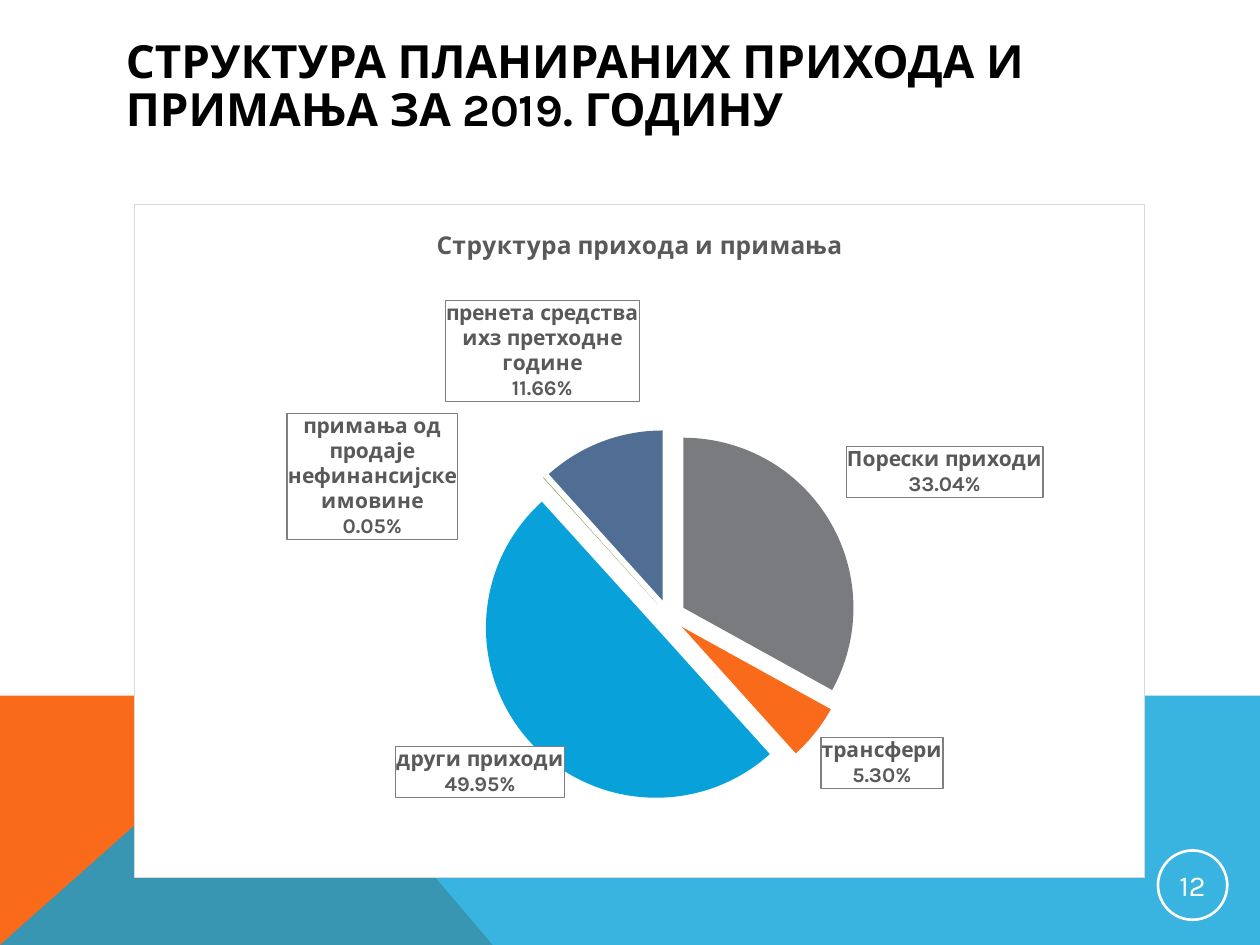
from lxml import etree
from pptx import Presentation
from pptx.chart.data import CategoryChartData
from pptx.dml.color import RGBColor
from pptx.enum.chart import XL_CHART_TYPE as ChartType
from pptx.enum.shapes import MSO_SHAPE as Shape
from pptx.enum.text import MSO_ANCHOR as Anchor, PP_ALIGN as Align
from pptx.oxml import parse_xml
from pptx.oxml.ns import nsdecls, qn
from pptx.util import Inches, Pt

FONT = "Karla"
BLACK = RGBColor(0x00, 0x00, 0x00)
WHITE = RGBColor(0xFF, 0xFF, 0xFF)
ORANGE = RGBColor(0xF9, 0x6A, 0x1B)
BLUE = RGBColor(0x08, 0xA1, 0xD9)
GRAY = RGBColor(0x79, 0x7B, 0x7E)
GREEN = RGBColor(0x7C, 0x98, 0x4A)
TAN = RGBColor(0xC2, 0xAD, 0x8D)
NAVY = RGBColor(0x50, 0x6E, 0x94)
TEXT_GRAY = RGBColor(0x59, 0x59, 0x59)
LABEL_BORDER = RGBColor(0x7F, 0x7F, 0x7F)
CHART_BORDER = RGBColor(0xD9, 0xD9, 0xD9)


def write_text(frame, text, size, color, bold=False, align=Align.LEFT, spacing=1.0):
    frame.word_wrap = True
    frame.vertical_anchor = Anchor.MIDDLE
    paragraph = frame.paragraphs[0]
    paragraph.alignment = align
    paragraph.line_spacing = spacing
    run = paragraph.add_run()
    run.text = text
    run.font.name = FONT
    run.font.size = Pt(size)
    run.font.bold = bold
    run.font.color.rgb = color


def layout_xml(x, y, extra=""):
    return (f'<c:layout {nsdecls("c")}><c:manualLayout>{extra}'
            f'<c:x val="{x}"/><c:y val="{y}"/></c:manualLayout></c:layout>')


presentation = Presentation()
presentation.slide_width = Inches(10)
presentation.slide_height = Inches(7.5)
slide = presentation.slides.add_slide(presentation.slide_layouts[6])
shapes = slide.shapes

# Footer bands: points, colour, opacity in percent
bands = [
    ([(0, 7.5), (0, 5.52), (2.23, 5.52), (3.91, 7.5)], ORANGE, 100),
    ([(0, 7.5), (2.23, 5.52), (10, 5.52), (10, 7.5)], BLUE, 80),
]
for points, color, opacity in bands:
    corners = [(Inches(x), Inches(y)) for x, y in points]
    builder = shapes.build_freeform(*corners[0])
    builder.add_line_segments(corners[1:], close=True)
    band = builder.convert_to_shape()
    band.shadow.inherit = False
    band.fill.solid()
    band.fill.fore_color.rgb = color
    band.line.fill.background()
    if opacity < 100:
        color_element = band.fill._xPr.find(".//" + qn("a:srgbClr"))
        etree.SubElement(color_element, qn("a:alpha")).set("val", str(opacity * 1000))

# Title
title = shapes.add_textbox(Inches(0.9), Inches(0.4), Inches(8.22), Inches(0.6))
write_text(title.text_frame, "СТРУКТУРА ПЛАНИРАНИХ ПРИХОДА И ПРИМАЊА ЗА 2019. ГОДИНУ",
           size=26.1, color=BLACK, bold=True, spacing=0.87)

# Page number
badge = shapes.add_shape(Shape.OVAL, Inches(9.19), Inches(6.75), Inches(0.55), Inches(0.55))
badge.shadow.inherit = False
badge.fill.background()
badge.line.color.rgb = WHITE
badge.line.width = Pt(1.5)
frame = badge.text_frame
frame.margin_left = frame.margin_right = frame.margin_top = frame.margin_bottom = Inches(0.01)
write_text(frame, "12", size=16.5, color=WHITE, align=Align.CENTER)

# Revenue slices: name, percent, colour, label offset (None hides the label)
slices = [
    ("Порески приходи", 33.04, GRAY, (0.01, -0.03)),
    ("трансфери", 5.3, ORANGE, (0, 0)),
    ("други приходи", 49.95, BLUE, (0.04, 0)),
    ("примања од продаје нефинансијске имовине", 0.05, GREEN, (-0.08, 0.1)),
    ("примања од продаје финансијске имовине", 0, TAN, None),
    ("пренета средства ихз претходне године", 11.66, NAVY, (0.04, -0.05)),
]
data = CategoryChartData()
data.categories = [name for name, *_ in slices]
data.add_series("Series 1", [value for _, value, *_ in slices])
chart = shapes.add_chart(ChartType.PIE, Inches(1.06), Inches(1.62),
                         Inches(8.03), Inches(5.35), data).chart
chart.has_legend = False
chart.font.name = FONT
chart.font.size = Pt(10)
chart.has_title = True
write_text(chart.chart_title.text_frame, "Структура прихода и примања",
           size=14, color=TEXT_GRAY, bold=True, align=Align.CENTER)

# Chart frame and plot position
chart_space = chart._chartSpace
frame_format = parse_xml(
    f'<c:spPr {nsdecls("c", "a")}><a:solidFill><a:srgbClr val="{WHITE}"/></a:solidFill>'
    f'<a:ln w="9525"><a:solidFill><a:srgbClr val="{CHART_BORDER}"/></a:solidFill></a:ln></c:spPr>')
chart_space.find(qn("c:chart")).addnext(frame_format)
plot_area = chart_space.find(".//" + qn("c:plotArea"))
for old_layout in plot_area.findall(qn("c:layout")):
    plot_area.remove(old_layout)
plot_layout = parse_xml(layout_xml(
    0.215, 0.334, '<c:layoutTarget val="inner"/><c:xMode val="edge"/><c:yMode val="edge"/>'))
manual = plot_layout[0]
for tag, value in (("c:w", "0.628"), ("c:h", "0.556")):
    etree.SubElement(manual, qn(tag)).set("val", value)
plot_area.insert(0, plot_layout)

# Slice colours and explosion
plot = chart.plots[0]
plot.vary_by_categories = True
series = plot.series[0]
for index, (_, _, color, _) in enumerate(slices):
    fill = series.points[index].format.fill
    fill.solid()
    fill.fore_color.rgb = color
explosion = parse_xml(f'<c:explosion {nsdecls("c")} val="10"/>')
series._element.find(qn("c:dPt")).addprevious(explosion)
for point in series._element.findall(qn("c:dPt")):
    point.find(qn("c:spPr")).addprevious(parse_xml(f'<c:explosion {nsdecls("c")} val="10"/>'))

# Boxed labels with category and percent
label_format = (
    '<c:numFmt formatCode="0.00%" sourceLinked="0"/>'
    f'<c:spPr><a:solidFill><a:srgbClr val="{WHITE}"/></a:solidFill>'
    f'<a:ln w="9525"><a:solidFill><a:srgbClr val="{LABEL_BORDER}"/></a:solidFill></a:ln></c:spPr>'
    '<c:txPr><a:bodyPr wrap="square"/><a:p><a:pPr><a:defRPr sz="1200" b="1">'
    f'<a:solidFill><a:srgbClr val="{TEXT_GRAY}"/></a:solidFill><a:latin typeface="{FONT}"/>'
    '</a:defRPr></a:pPr><a:endParaRPr lang="sr-Cyrl-RS"/></a:p></c:txPr>'
    '<c:dLblPos val="outEnd"/><c:showLegendKey val="0"/><c:showVal val="0"/>'
    '<c:showCatName val="1"/><c:showSerName val="0"/><c:showPercent val="1"/>'
    '<c:showBubbleSize val="0"/><c:separator>\n</c:separator>')
point_labels = ""
for index, (*_, offset) in enumerate(slices):
    content = layout_xml(*offset) + label_format if offset else '<c:delete val="1"/>'
    point_labels += f'<c:dLbl><c:idx val="{index}"/>{content}</c:dLbl>'
labels = parse_xml(f'<c:dLbls {nsdecls("c", "a")}>{point_labels}{label_format}'
                   '<c:showLeaderLines val="0"/></c:dLbls>')
series._element.find(qn("c:cat")).addprevious(labels)

presentation.save("out.pptx")
